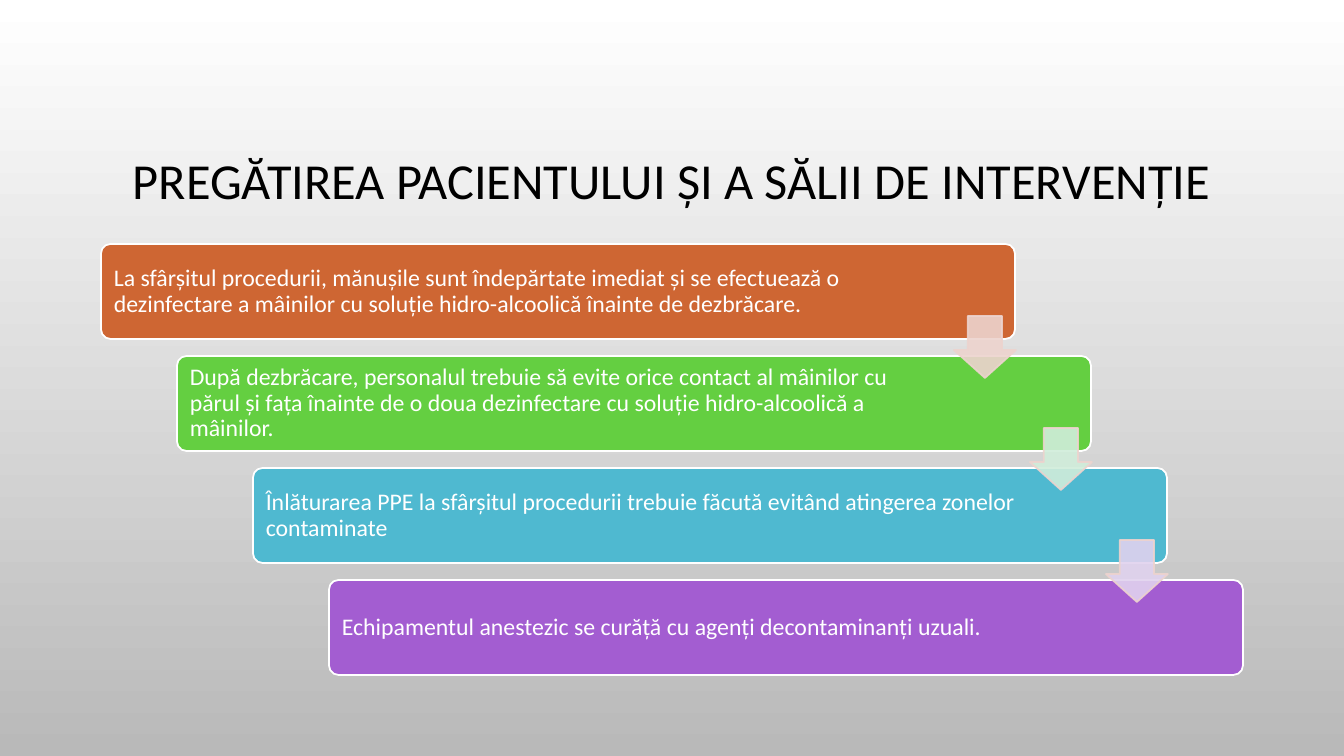
from lxml import etree
from pptx import Presentation
from pptx import util as u
from pptx.dml.color import RGBColor
from pptx.enum import shapes, text
from pptx.oxml.ns import qn

COLORS = {
    "black": "000000", "white": "FFFFFF", "gray": "B9B9B9",
    "orange": "CE6633", "green": "64CF41", "blue": "4FB9D0", "purple": "A35DD1",
    "pink": "EDD3CE", "mint": "D0EDDA", "lilac": "E0D2EE",
}
STEPS = [
    ("orange", 115, "La sfârșitul procedurii, mănușile sunt îndepărtate imediat și se efectuează o "
     "dezinfectare a mâinilor cu soluție hidro-alcoolică înainte de dezbrăcare."),
    ("green", 148, "După dezbrăcare, personalul trebuie să evite orice contact al mâinilor cu părul "
     "și fața înainte de o doua dezinfectare cu soluție hidro-alcoolică a mâinilor."),
    ("blue", 148, "Înlăturarea PPE la sfârșitul procedurii trebuie făcută evitând atingerea zonelor "
     "contaminate"),
    ("purple", 148, "Echipamentul anestezic se curăță cu agenți decontaminanți uzuali."),
]
ARROWS = ["pink", "mint", "lilac"]
STEP_X, STEP_Y = 76, 112


def px(n):
    return u.Emu(round(n * 914400 / 100.8))


def rgb(name):
    return RGBColor.from_string(COLORS[name])


class Deck:
    """Style and current slide, with one method per kind of element."""

    font = "Calibri"

    def __init__(self):
        self.prs = Presentation()
        self.prs.slide_width, self.prs.slide_height = px(1344), px(756)
        self.s = self.prs.slides.add_slide(self.prs.slide_layouts[5])

    def background(self, top, bottom):
        fill = self.s.background.fill
        fill.gradient()
        fill.gradient_angle = 270
        for stop, color in zip(fill.gradient_stops, (top, bottom)):
            stop.color.rgb = rgb(color)

    def put_text(self, sp, words, size, color, align, insets):
        tf = sp.text_frame
        tf.word_wrap = True
        tf.auto_size = text.MSO_AUTO_SIZE.NONE
        tf.vertical_anchor = text.MSO_ANCHOR.MIDDLE
        tf.margin_left, tf.margin_top, tf.margin_right, tf.margin_bottom = map(px, insets)
        p = tf.paragraphs[0]
        p.text = words
        p.alignment = align
        p.line_spacing = 0.9
        p.font.name, p.font.size = self.font, u.Pt(size)
        p.font.color.rgb = rgb(color)

    def title(self, words, x, y, w, h):
        sp = self.s.shapes.title
        sp.left, sp.top, sp.width, sp.height = map(px, (x, y, w, h))
        self.put_text(sp, words, 36, "black", text.PP_ALIGN.CENTER, (10, 59, 10, 5))

    def shape(self, kind, x, y, w, h, fill, line, adjustments):
        sp = self.s.shapes.add_shape(kind, *map(px, (x, y, w, h)))
        sp.shadow.inherit = False
        for i, value in enumerate(adjustments):
            sp.adjustments[i] = value
        sp.fill.solid()
        sp.fill.fore_color.rgb = rgb(fill)
        sp.line.color.rgb = rgb(line)
        sp.line.width = u.Pt(1.25)
        return sp

    def bar(self, words, x, y, fill, right):
        sp = self.shape(shapes.MSO_SHAPE.ROUNDED_RECTANGLE, x, y, 914, 95, fill, "white", [0.1])
        self.put_text(sp, words, 17, "white", text.PP_ALIGN.LEFT, (10, 10, right, 10))

    def arrow(self, x, y, fill):
        sp = self.shape(shapes.MSO_SHAPE.DOWN_ARROW, x, y, 62, 62, fill, "pink", [0.55, 0.45])
        for color in sp.element.spPr.iter(qn("a:srgbClr")):
            etree.SubElement(color, qn("a:alpha"), val="90000")


def main():
    deck = Deck()
    deck.background("white", "gray")
    deck.title("PREGĂTIREA PACIENTULUI ȘI A SĂLII DE INTERVENȚIE", 101, 69, 1142, 175)
    for i, (fill, right, words) in enumerate(STEPS):
        deck.bar(words, 101 + i * STEP_X, 244 + i * STEP_Y, fill, right)
    for i, fill in enumerate(ARROWS):
        deck.arrow(954 + i * STEP_X, 316 + i * STEP_Y, fill)
    deck.prs.save("out.pptx")


if __name__ == "__main__":
    main()
